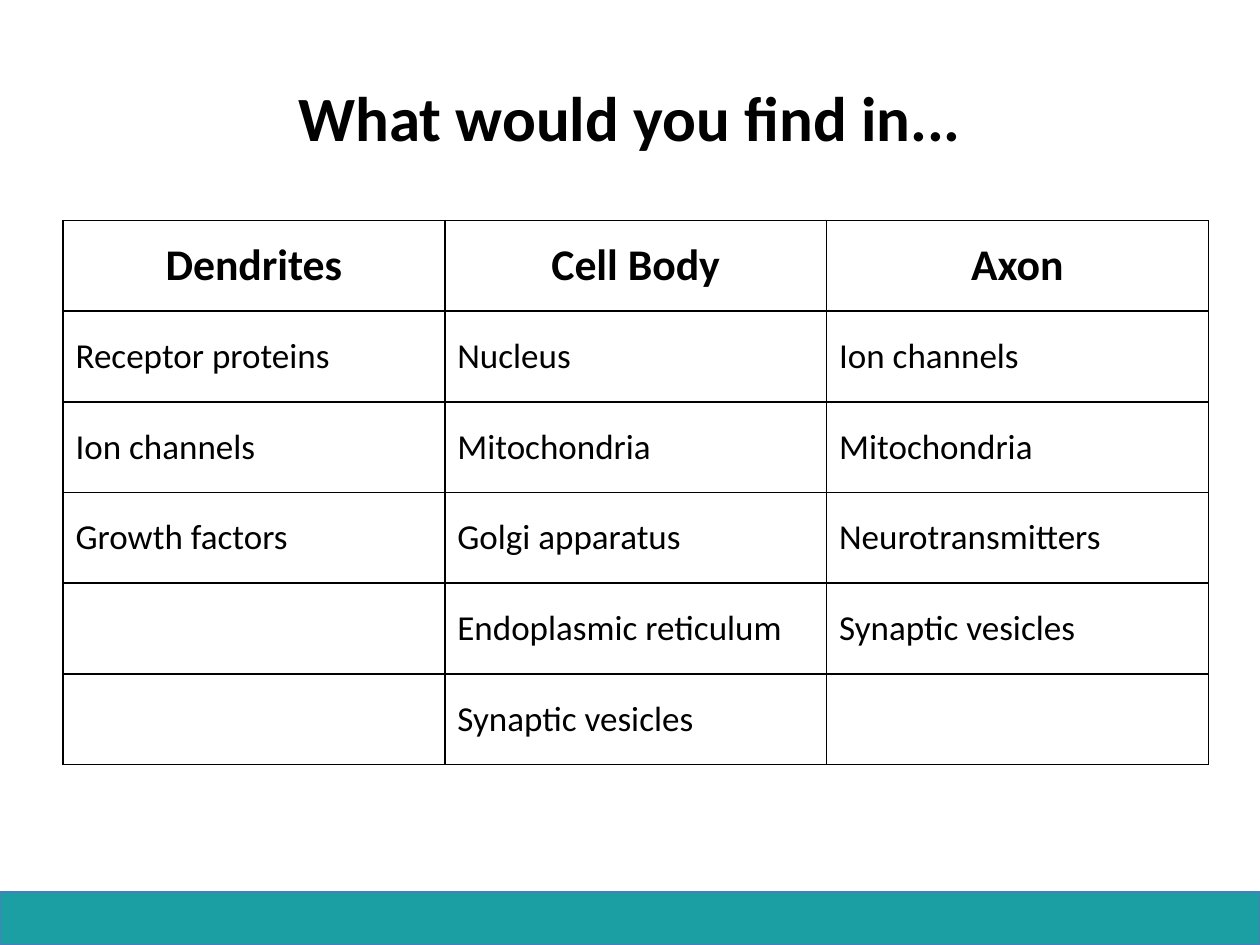
from itertools import zip_longest

from lxml.etree import SubElement
from pptx import Presentation
from pptx.dml.color import RGBColor
from pptx.enum.shapes import MSO_SHAPE
from pptx.enum.text import MSO_ANCHOR, PP_ALIGN
from pptx.oxml.ns import qn
from pptx.util import Inches, Pt

TITLE = "What would you find in..."
CONTENTS = {
    "Dendrites": ["Receptor proteins", "Ion channels", "Growth factors"],
    "Cell Body": ["Nucleus", "Mitochondria", "Golgi apparatus",
                  "Endoplasmic reticulum", "Synaptic vesicles"],
    "Axon": ["Ion channels", "Mitochondria", "Neurotransmitters", "Synaptic vesicles"],
}

FONT = "Calibri"
BLACK = RGBColor(0x00, 0x00, 0x00)
TEAL = RGBColor(0x1C, 0x9F, 0xA3)
BLUE = RGBColor(0x4B, 0x7E, 0xBC)

SLIDE_WIDTH, SLIDE_HEIGHT = 10, 7.5
FOOTER_HEIGHT = 0.42
COLUMN_WIDTH, ROW_HEIGHT = 3.03, 0.72


def write(frame, text, size, bold=False, align=PP_ALIGN.LEFT):
    paragraph = frame.paragraphs[0]
    paragraph.alignment = align
    run = paragraph.add_run()
    run.text = text
    run.font.name = FONT
    run.font.size = Pt(size)
    run.font.bold = bold
    run.font.color.rgb = BLACK


def add_borders(cell):
    properties = cell._tc.get_or_add_tcPr()
    for position, side in enumerate(("a:lnL", "a:lnR", "a:lnT", "a:lnB")):
        border = SubElement(properties, qn(side), w=str(Pt(1)))
        fill = SubElement(border, qn("a:solidFill"))
        SubElement(fill, qn("a:srgbClr"), val=str(BLACK))
        properties.insert(position, border)


def add_footer(slide):
    footer = slide.shapes.add_shape(
        MSO_SHAPE.RECTANGLE, 0, Inches(SLIDE_HEIGHT - FOOTER_HEIGHT),
        Inches(SLIDE_WIDTH), Inches(FOOTER_HEIGHT))
    footer.shadow.inherit = False
    footer.fill.solid()
    footer.fill.fore_color.rgb = TEAL
    footer.line.color.rgb = BLUE
    footer.line.width = Pt(0.75)


def add_title(slide):
    title = slide.shapes.add_textbox(Inches(0.5), Inches(0.3), Inches(9), Inches(1.25))
    title.text_frame.word_wrap = True
    title.text_frame.vertical_anchor = MSO_ANCHOR.MIDDLE
    write(title.text_frame, TITLE, 36, True, PP_ALIGN.CENTER)


def add_contents_table(slide):
    rows = [tuple(CONTENTS), *zip_longest(*CONTENTS.values(), fillvalue="")]
    frame = slide.shapes.add_table(
        len(rows), len(CONTENTS), Inches(0.5), Inches(1.75),
        Inches(COLUMN_WIDTH * len(CONTENTS)), Inches(ROW_HEIGHT * len(rows)))
    table = frame.table
    table.first_row = table.horz_banding = False
    for column in table.columns:
        column.width = Inches(COLUMN_WIDTH)
    for row_index, texts in enumerate(rows):
        table.rows[row_index].height = Inches(ROW_HEIGHT)
        for column_index, text in enumerate(texts):
            cell = table.cell(row_index, column_index)
            cell.fill.background()
            cell.vertical_anchor = MSO_ANCHOR.MIDDLE
            add_borders(cell)
            if row_index == 0:
                write(cell.text_frame, text, 25, True, PP_ALIGN.CENTER)
            elif text:
                write(cell.text_frame, text, 20)


def main():
    presentation = Presentation()
    presentation.slide_width = Inches(SLIDE_WIDTH)
    presentation.slide_height = Inches(SLIDE_HEIGHT)
    slide = presentation.slides.add_slide(presentation.slide_layouts[6])
    add_footer(slide)
    add_title(slide)
    add_contents_table(slide)
    presentation.save("out.pptx")


if __name__ == "__main__":
    main()
